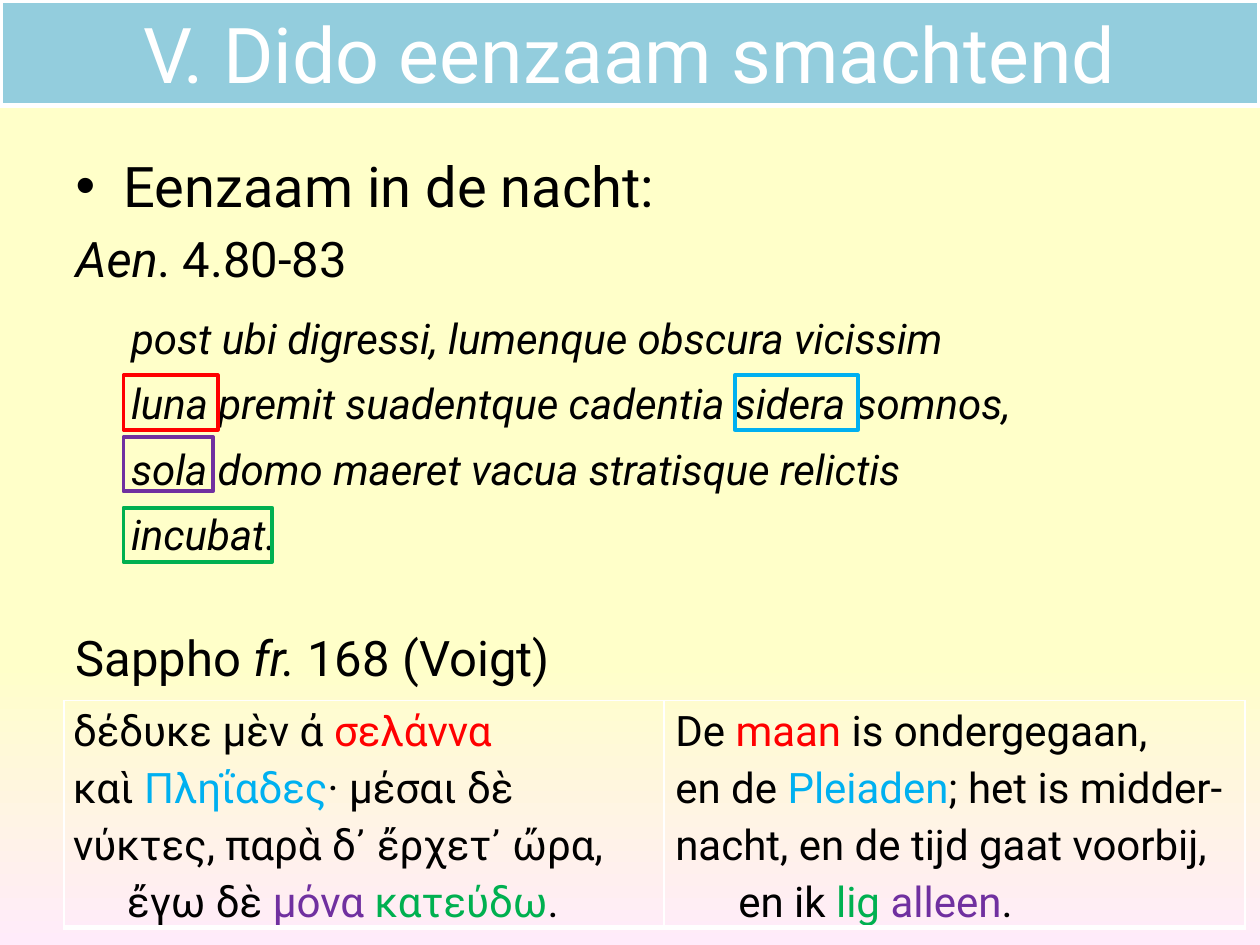
from lxml import etree
from pptx import Presentation
from pptx.dml.color import RGBColor
from pptx.enum.shapes import MSO_SHAPE as Shape
from pptx.enum.text import MSO_ANCHOR as Anchor, PP_ALIGN as Align
from pptx.oxml.ns import qn
from pptx.util import Inches, Pt

MOON, STARS, ALONE, LYING = "FF0000", "00B0F0", "7030A0", "00B050"
BLACK, WHITE = "000000", "FFFFFF"


def rgb(code):
    return RGBColor.from_string(code)


def place(shape, left, top, width, height):
    shape.left, shape.top = Inches(left), Inches(top)
    shape.width, shape.height = Inches(width), Inches(height)


def write(par, pieces, size=24, color=BLACK, italic=False, align=None, level=0,
          margin=None, indent=0, before=0, spacing=None, bullet=None):
    """Fill a paragraph; a piece is a text or (text, {color, italic})."""
    par.level, par.alignment = level, align
    par.space_before = Pt(before)
    if spacing:
        par.line_spacing = spacing
    props = par._p.get_or_add_pPr()
    if margin is not None:
        props.set("marL", str(Inches(margin)))
        props.set("indent", str(Inches(indent)))
    if bullet:
        etree.SubElement(props, qn("a:buChar")).set("char", bullet)
    else:
        etree.SubElement(props, qn("a:buNone"))
    for piece in pieces:
        text, own = (piece, {}) if isinstance(piece, str) else piece
        for number, line in enumerate(text.split("\n")):
            if number:
                par.add_line_break()
            run = par.add_run()
            run.text = line
            run.font.name, run.font.size = "Roboto", Pt(size)
            run.font.italic = own.get("italic", italic)
            run.font.color.rgb = rgb(own.get("color", color))


def paragraphs(frame, count):
    return [frame.paragraphs[0]] + [frame.add_paragraph() for _ in range(count - 1)]


def paint_background(slide):
    fill = slide.background.fill
    fill.gradient()
    fill.gradient_angle = 270
    for stop, (position, color) in zip(fill.gradient_stops, [(0.7, "FFFFC9"), (1, "FFEBFA")]):
        stop.position, stop.color.rgb = position, rgb(color)


def add_heading(slide, box):
    heading = slide.shapes.title
    place(heading, *box)
    heading.fill.solid()
    heading.fill.fore_color.rgb = rgb("93CDDD")
    heading.line.color.rgb, heading.line.width = rgb(WHITE), Pt(3)
    heading.text_frame.vertical_anchor = Anchor.MIDDLE
    write(heading.text_frame.paragraphs[0], ["V. Dido eenzaam smachtend"],
          size=44, color=WHITE, align=Align.CENTER)


def add_passage(slide, box):
    body = slide.placeholders[1]
    place(body, *box)
    verses = ("post ubi digressi, lumenque obscura vicissim\n"
              "luna premit suadentque cadentia sidera somnos,\n"
              "sola domo maeret vacua stratisque relictis\n"
              "incubat.")
    content = [
        (["Eenzaam in de nacht:"],
         dict(size=32, margin=0.38, indent=-0.38, before=6.4, bullet="•")),
        ([("Aen", {"italic": True}), ". 4.80-83"], dict(size=28, margin=0, before=5.6)),
        ([verses], dict(italic=True, level=1, margin=0.44, before=5.8, spacing=1.3)),
        (["Sappho ", ("fr. ", {"italic": True}), "168 (Voigt)"],
         dict(size=28, level=1, margin=0, before=39)),
    ]
    for par, (pieces, style) in zip(paragraphs(body.text_frame, len(content)), content):
        write(par, pieces, **style)


def set_borders(cell):
    props = cell._tc.get_or_add_tcPr()
    for index, (side, width) in enumerate([("L", 1), ("R", 1), ("T", 1), ("B", 3)]):
        line = etree.Element(qn(f"a:ln{side}"), w=str(Pt(width)))
        solid = etree.SubElement(line, qn("a:solidFill"))
        etree.SubElement(solid, qn("a:srgbClr"), val=WHITE)
        props.insert(index, line)


def add_translation(slide, box):
    greek = [
        ["δέδυκε μὲν ἀ ", ("σελάννα", {"color": MOON})],
        ["καὶ ", ("Πληΐαδες", {"color": STARS}), "· μέσαι δὲ"],
        ["νύκτες, παρὰ δ᾿ ἔρχετ᾿ ὤρα,"],
        ["ἔγω δὲ ", ("μόνα ", {"color": ALONE}), ("κατεύδω", {"color": LYING}), "."],
    ]
    dutch = [
        ["De ", ("maan", {"color": MOON}), " is ondergegaan,"],
        ["en de ", ("Pleiaden", {"color": STARS}), "; het is midder-"],
        ["nacht, en de tijd gaat voorbij,"],
        ["en ik ", ("lig ", {"color": LYING}), ("alleen", {"color": ALONE}), "."],
    ]
    table = slide.shapes.add_table(1, 2, *map(Inches, box)).table
    table.first_row = table.horz_banding = False
    # width, lines, margin of the first lines, margin of the last line
    columns = [(4.76, greek, 0, 0.43), (4.61, dutch, 0.02, 0.52)]
    for index, (width, lines, margin, last_margin) in enumerate(columns):
        table.columns[index].width = Inches(width)
        cell = table.cell(0, index)
        cell.fill.background()
        set_borders(cell)
        cell.margin_left = cell.margin_right = Inches(0.07)
        cell.margin_top = cell.margin_bottom = 0
        for par, pieces in zip(paragraphs(cell.text_frame, len(lines)), lines):
            write(par, pieces, spacing=1.15,
                  margin=last_margin if pieces is lines[-1] else margin)


def add_word_frame(slide, color, left, top, width, height=0.43):
    frame = slide.shapes.add_shape(Shape.RECTANGLE, *map(Inches, (left, top, width, height)))
    frame.shadow.inherit = False
    frame.fill.background()
    frame.line.color.rgb, frame.line.width = rgb(color), Pt(2.25)


def main():
    prs = Presentation()
    prs.slide_width, prs.slide_height = Inches(10), Inches(7.5)
    slide = prs.slides.add_slide(prs.slide_layouts[1])
    paint_background(slide)
    add_heading(slide, (0, 0, 10, 0.84))
    add_passage(slide, (0.5, 1.15, 9.22, 6.14))
    add_translation(slide, (0.51, 5.56, 9.37, 1.8))
    # Frames around the words that echo Sappho
    verse_left = 0.98
    for color, left, top, width in [(MOON, verse_left, 2.98, 0.75),
                                    (ALONE, verse_left, 3.47, 0.71),
                                    (LYING, verse_left, 4.03, 1.18),
                                    (STARS, 5.83, 2.98, 0.98)]:
        add_word_frame(slide, color, left, top, width)
    prs.save("out.pptx")


if __name__ == "__main__":
    main()
